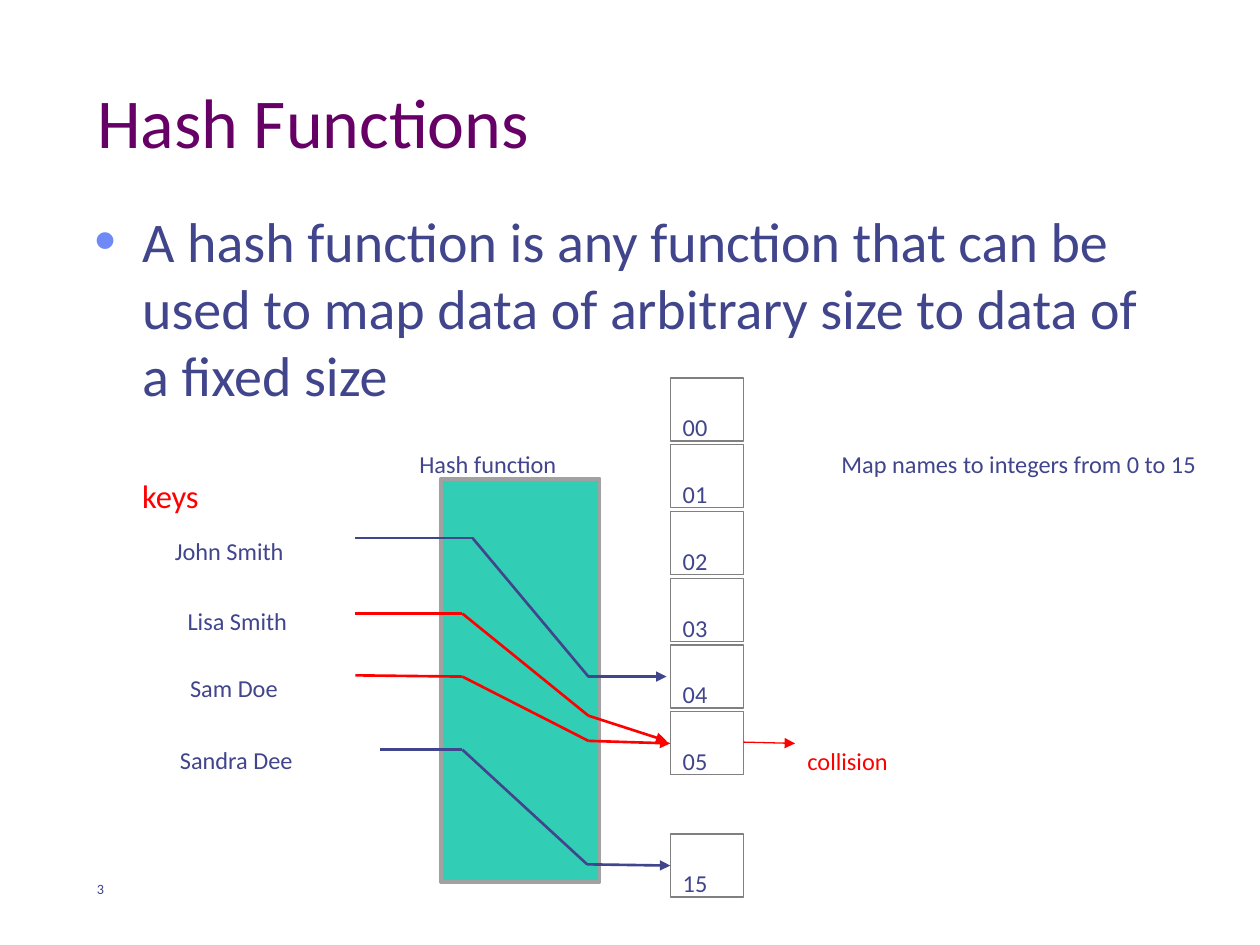
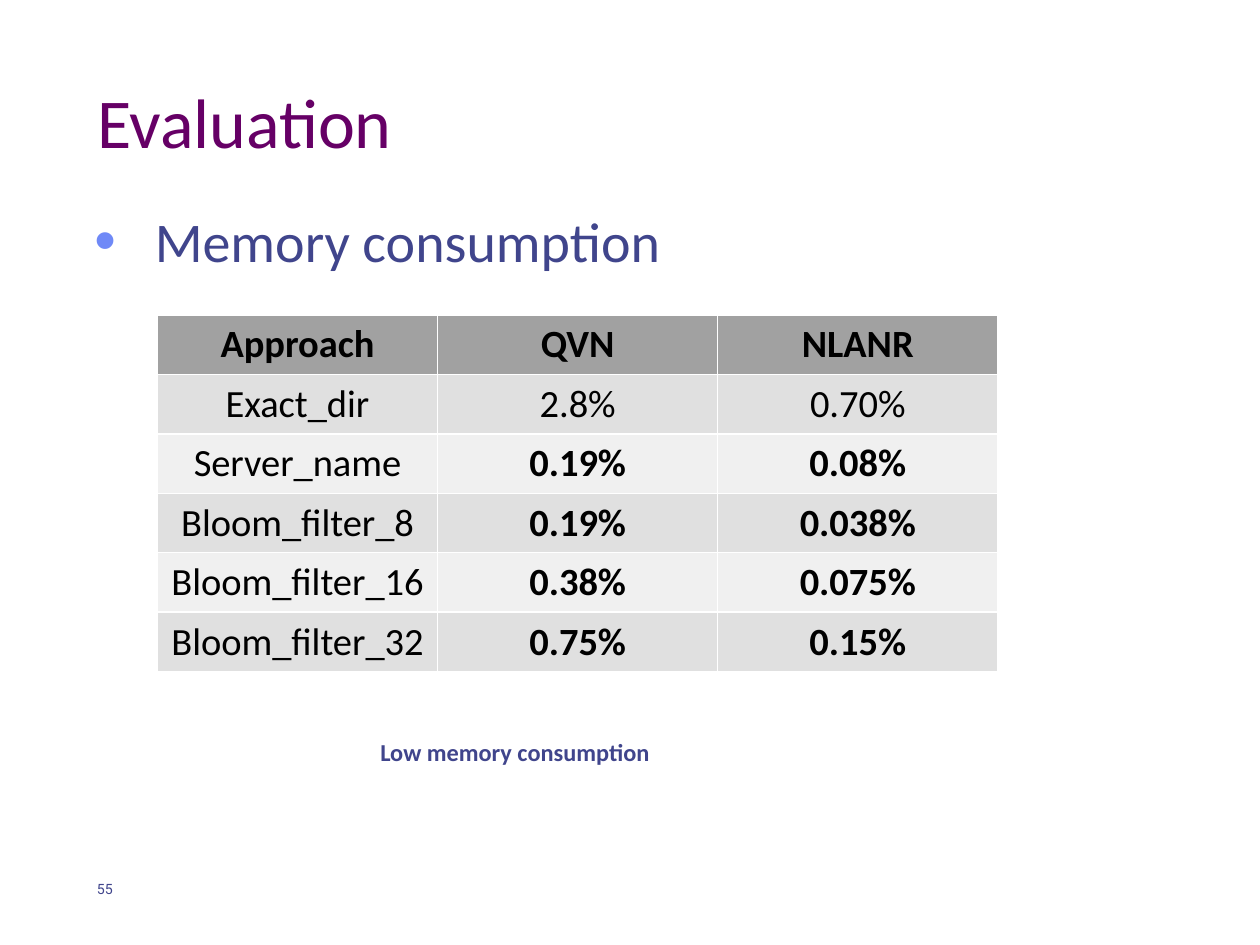
import itertools
from typing import NamedTuple

import lxml.etree
import pptx
import pptx.dml.color
import pptx.enum.shapes
import pptx.enum.text
import pptx.oxml.ns
import pptx.util

Inches = pptx.util.Inches
Pt = pptx.util.Pt
ALIGN = pptx.enum.text.PP_ALIGN
ANCHOR = pptx.enum.text.MSO_ANCHOR
RECT = pptx.enum.shapes.MSO_SHAPE.RECTANGLE
STRAIGHT = pptx.enum.shapes.MSO_CONNECTOR.STRAIGHT

FONT = "Calibri"
PLUM, INK, RED, BULLET = "660066", "40458C", "FF0000", "6F89F7"
TEAL, GRAY, EDGE, BLACK = "32CDB5", "A1A1A1", "808080", "000000"
BANDS = ("E0E0E0", "F0F0F0")


class Label(NamedTuple):
    text: str
    left: float
    top: float
    width: float
    height: float = 0.5
    size: int = 24
    color: str = INK
    bold: bool = False
    font: str = FONT
    anchor: ANCHOR = ANCHOR.TOP


class Route(NamedTuple):
    """A bent arrow that runs through the given points."""
    color: str
    points: tuple[tuple[float, float], ...]


KEYS = (
    Label("keys", 1.03, 3.43, 1.6, 0.64, size=32, color=RED),
    Label("John Smith", 1.29, 3.98, 1.83),
    Label("Lisa Smith", 1.39, 4.54, 1.83),
    Label("Sam Doe", 1.41, 5.07, 1.42),
    Label("Sandra Dee", 1.33, 5.64, 1.83),
)
NOTES = (
    Label("Hash function", 3.23, 3.29, 2.78),
    Label("Map names to integers from 0 to 15", 6.58, 3.29, 3.37, 0.91),
    Label("collision", 6.31, 5.65, 1.53, color=RED),
)
ROUTES = (
    Route(INK, ((2.82, 4.27), (3.75, 4.27), (4.67, 5.37), (5.29, 5.37))),
    Route(RED, ((2.82, 4.87), (3.67, 4.87), (4.67, 5.68), (5.29, 5.88))),
    Route(RED, ((2.82, 5.36), (3.67, 5.37), (4.67, 5.88), (5.32, 5.9))),
    Route(INK, ((3.02, 5.95), (3.67, 5.95), (4.66, 6.86), (5.32, 6.87))),
)
SLOT_LEFT, SLOT_TOP, SLOT_STEP = 5.32, 3.0, 0.53
SLOTS = [Label(f"{i:02}", SLOT_LEFT, SLOT_TOP + i * SLOT_STEP, 0.58)
         for i in range(6)]
SLOTS.append(Label("15", SLOT_LEFT, 6.62, 0.58))

MEMORY = (
    ("Approach", "QVN", "NLANR"),
    ("Exact_dir", "2.8%", "0.70%"),
    ("Server_name", "0.19%", "0.08%"),
    ("Bloom_filter_8", "0.19%", "0.038%"),
    ("Bloom_filter_16", "0.38%", "0.075%"),
    ("Bloom_filter_32", "0.75%", "0.15%"),
)


def rgb(code: str) -> pptx.dml.color.RGBColor:
    return pptx.dml.color.RGBColor.from_string(code)


def style(para, size: int, color: str, bold: bool = False,
          font: str = FONT) -> None:
    for run in para.runs:
        run.font.name = font
        run.font.size = Pt(size)
        run.font.bold = bold
        run.font.color.rgb = rgb(color)


def place(shape, left: float, top: float, width: float, height: float) -> None:
    shape.left, shape.top = Inches(left), Inches(top)
    shape.width, shape.height = Inches(width), Inches(height)


def fill_text(shape, label: Label) -> None:
    """Write a label as lowered text, which is drawn smaller than its size."""
    frame = shape.text_frame
    frame.text = label.text
    frame.word_wrap = True
    frame.vertical_anchor = label.anchor
    para = frame.paragraphs[0]
    para.alignment = ALIGN.LEFT
    style(para, label.size, label.color, label.bold, label.font)
    for run in para.runs:
        run._r.get_or_add_rPr().set("baseline", "-25000")


def add_label(slide, label: Label) -> None:
    box = slide.shapes.add_textbox(0, 0, 0, 0)
    place(box, label.left, label.top, label.width, label.height)
    fill_text(box, label)


def add_rect(slide, left: float, top: float, width: float, height: float,
             line: str, weight: float, fill: str = ""):
    rect = slide.shapes.add_shape(RECT, 0, 0, 0, 0)
    place(rect, left, top, width, height)
    rect.shadow.inherit = False
    if fill:
        rect.fill.solid()
        rect.fill.fore_color.rgb = rgb(fill)
    else:
        rect.fill.background()
    rect.line.color.rgb = rgb(line)
    rect.line.width = Pt(weight)
    return rect


def add_route(slide, route: Route, weight: float = 1.5) -> None:
    legs = list(itertools.pairwise(route.points))
    for i, (start, end) in enumerate(legs, 1):
        leg = slide.shapes.add_connector(
            STRAIGHT, *(Inches(v) for v in start + end))
        leg.line.color.rgb = rgb(route.color)
        leg.line.width = Pt(weight)
        if i == len(legs):
            lxml.etree.SubElement(leg.line._get_or_add_ln(),
                                  pptx.oxml.ns.qn("a:tailEnd"), type="triangle")
        lxml.etree.SubElement(leg._element.spPr,
                              pptx.oxml.ns.qn("a:effectLst"))


def add_bullet(slide, text: str, indent: float) -> None:
    box = slide.shapes.add_textbox(0, 0, 0, 0)
    place(box, 0.65, 1.59, 8.75, 4.5)
    box.text_frame.word_wrap = True
    para = box.text_frame.paragraphs[0]
    para.text = text
    props = para._p.get_or_add_pPr()
    props.set("marL", str(Inches(indent)))
    props.set("indent", str(-Inches(indent)))
    qn = pptx.oxml.ns.qn
    tint = lxml.etree.SubElement(props, qn("a:buClr"))
    lxml.etree.SubElement(tint, qn("a:srgbClr"), val=BULLET)
    lxml.etree.SubElement(props, qn("a:buSzPct"), val="110000")
    lxml.etree.SubElement(props, qn("a:buFont"), typeface="Arial")
    lxml.etree.SubElement(props, qn("a:buChar"), char="•")
    style(para, 32, INK)


def add_slide(deck, title: str, bullet: str, number: str,
              indent: float = 0.38, font: str = FONT):
    """Add a slide with the shared title, bullet and page number."""
    slide = deck.slides.add_slide(deck.slide_layouts[5])
    head = slide.shapes.title
    place(head, 0.67, 0.33, 8.75, 1.25)
    head.text_frame.text = title
    head.text_frame.vertical_anchor = ANCHOR.MIDDLE
    para = head.text_frame.paragraphs[0]
    para.alignment = ALIGN.LEFT
    style(para, 40, PLUM)
    add_bullet(slide, bullet, indent)
    add_label(slide, Label(number, 0.67, 6.67, 0.67, size=14, font=font,
                           anchor=ANCHOR.BOTTOM))
    return slide


def add_table(slide) -> None:
    grid = slide.shapes.add_table(
        len(MEMORY), len(MEMORY[0]), Inches(1.25), Inches(2.5),
        Inches(6.67), Inches(2.83)).table
    for r, row in enumerate(MEMORY):
        for c, text in enumerate(row):
            cell = grid.cell(r, c)
            cell.fill.solid()
            cell.fill.fore_color.rgb = rgb(BANDS[(r - 1) % 2] if r else GRAY)
            cell.text_frame.text = text
            para = cell.text_frame.paragraphs[0]
            para.alignment = ALIGN.CENTER
            style(para, 22, BLACK, bold=r == 0 or (r > 1 and c > 0))


def hash_slide(deck) -> None:
    slide = add_slide(
        deck, "Hash Functions",
        "A hash function is any function that can be used to map data of "
        "arbitrary size to data of a fixed size", "3")
    for slot in SLOTS:
        rect = add_rect(slide, slot.left, slot.top, slot.width, slot.height,
                        EDGE, 0.75)
        fill_text(rect, slot)
    add_rect(slide, 3.5, 3.8, 1.26, 3.2, GRAY, 2, TEAL)
    for label in KEYS + NOTES:
        add_label(slide, label)
    for route in ROUTES:
        add_route(slide, route)
    add_route(slide, Route(RED, ((5.9, 5.89), (6.31, 5.9))), 0.75)


def memory_slide(deck) -> None:
    slide = add_slide(deck, "Evaluation", "Memory consumption", "55",
                      indent=0.48, font="Roboto")
    add_table(slide)
    add_label(slide, Label("Low memory consumption", 2.92, 5.58, 3.92,
                           bold=True))


def main() -> None:
    deck = pptx.Presentation()
    deck.slide_width, deck.slide_height = Inches(10), Inches(7.5)
    hash_slide(deck)
    memory_slide(deck)
    deck.save("out.pptx")


if __name__ == "__main__":
    main()
